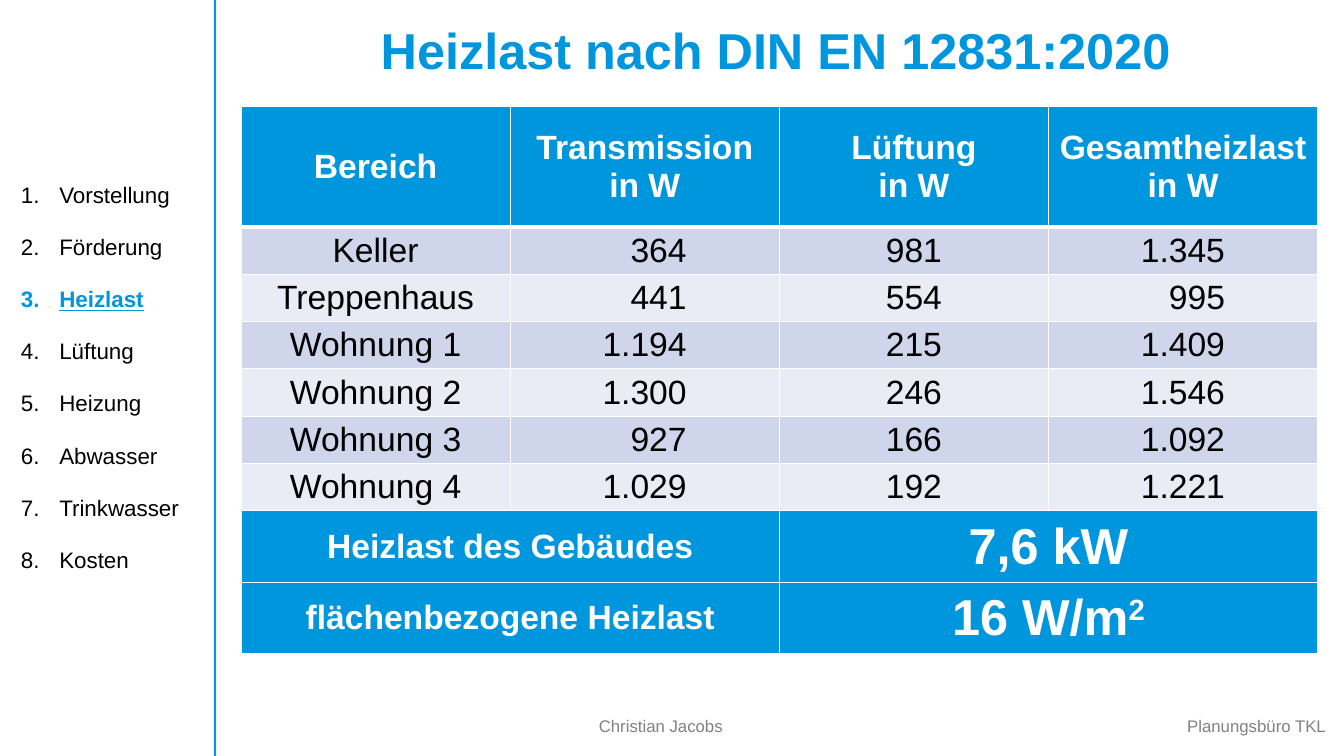
from dataclasses import dataclass

from lxml import etree
from pptx import Presentation
from pptx.dml.color import RGBColor
from pptx.enum.shapes import MSO_CONNECTOR
from pptx.enum.text import MSO_ANCHOR, PP_ALIGN
from pptx.oxml.ns import qn
from pptx.util import Inches, Pt

BLUE = RGBColor(0x00, 0x96, 0xDE)
WHITE = RGBColor(0xFF, 0xFF, 0xFF)
BLACK = RGBColor(0x00, 0x00, 0x00)
GRAY = RGBColor(0x81, 0x82, 0x86)
BAND_DARK = RGBColor(0xCF, 0xD5, 0xEA)
BAND_LIGHT = RGBColor(0xE9, 0xEB, 0xF5)
LEFT, CENTER, RIGHT = PP_ALIGN.LEFT, PP_ALIGN.CENTER, PP_ALIGN.RIGHT
TOP, MIDDLE = MSO_ANCHOR.TOP, MSO_ANCHOR.MIDDLE
STRAIGHT = MSO_CONNECTOR.STRAIGHT

CHAPTERS = ["Vorstellung", "Förderung", "Heizlast", "Lüftung",
            "Heizung", "Abwasser", "Trinkwasser", "Kosten"]
CURRENT_CHAPTER = "Heizlast"
HEADINGS = ["Bereich", "Transmission\nin W", "Lüftung\nin W", "Gesamtheizlast\nin W"]
AREAS = [
    ("Keller", "364", "981", "1.345"),
    ("Treppenhaus", "441", "554", "995"),
    ("Wohnung 1", "1.194", "215", "1.409"),
    ("Wohnung 2", "1.300", "246", "1.546"),
    ("Wohnung 3", "927", "166", "1.092"),
    ("Wohnung 4", "1.029", "192", "1.221"),
]
TOTALS = [("Heizlast des Gebäudes", "7,6 kW", ""),
          ("flächenbezogene Heizlast", "16 W/m", "2")]
ROW_HEIGHTS = [1.19] + [0.47] * len(AREAS) + [0.71] * len(TOTALS)
COLUMN_WIDTH = 2.67
COLUMN_ALIGNS = [CENTER, RIGHT, CENTER, RIGHT]
NUMBER_MARGIN = 0.92


@dataclass(frozen=True)
class Style:
    size: int
    color: RGBColor
    bold: bool = False
    underline: bool = False
    align: PP_ALIGN = LEFT


@dataclass(frozen=True)
class Area:
    left: float
    top: float
    width: float
    height: float


def style_para(para, style: Style) -> None:
    para.alignment = style.align
    para.font.name = "Arial"
    para.font.size = Pt(style.size)
    para.font.bold = style.bold
    para.font.underline = style.underline
    para.font.color.rgb = style.color


def add_text_frame(page, area: Area, anchor: MSO_ANCHOR):
    box = page.shapes.add_textbox(Inches(area.left), Inches(area.top),
                                  Inches(area.width), Inches(area.height))
    box.text_frame.word_wrap = True
    box.text_frame.vertical_anchor = anchor
    return box.text_frame


def add_label(page, area: Area, text: str, style: Style,
              anchor: MSO_ANCHOR = MIDDLE, line_spacing: float = 1.0) -> None:
    para = add_text_frame(page, area, anchor).paragraphs[0]
    para.text = text
    para.line_spacing = line_spacing
    style_para(para, style)


def add_chapters(page) -> None:
    frame = add_text_frame(page, Area(0.11, 1.75, 2.02, 4.54), TOP)
    for index, chapter in enumerate(CHAPTERS):
        para = frame.paragraphs[0] if index == 0 else frame.add_paragraph()
        current = chapter == CURRENT_CHAPTER
        para.text = chapter
        para.space_after = Pt(18)
        properties = para._p.get_or_add_pPr()
        properties.set("marL", str(Inches(0.38)))
        properties.set("indent", str(-Inches(0.38)))
        etree.SubElement(properties, qn("a:buFont"), typeface="Arial")
        etree.SubElement(properties, qn("a:buAutoNum"), type="arabicPeriod")
        style_para(para, Style(16, BLUE if current else BLACK, current, current))


def add_divider(page) -> None:
    line = page.shapes.add_connector(STRAIGHT, Inches(2.13), Inches(0),
                                     Inches(2.13), Inches(7.5))
    line.line.color.rgb = BLUE
    line.line.width = Pt(1.5)
    etree.SubElement(line._element.spPr, qn("a:effectLst"))


def style_cell(cell, fill: RGBColor, top: int = 1, bottom: int = 1) -> None:
    properties = cell._tc.get_or_add_tcPr()
    for side, width in (("L", 1), ("R", 1), ("T", top), ("B", bottom)):
        border = etree.SubElement(properties, qn(f"a:ln{side}"), w=str(Pt(width)))
        solid = etree.SubElement(border, qn("a:solidFill"))
        etree.SubElement(solid, qn("a:srgbClr"), val=str(WHITE))
    cell.fill.solid()
    cell.fill.fore_color.rgb = fill
    cell.vertical_anchor = MIDDLE
    cell.margin_left = cell.margin_right = Inches(0.05)
    cell.margin_top = cell.margin_bottom = Inches(0.03)


def write_cell(cell, text: str, style: Style) -> None:
    cell.text_frame.text = text
    for para in cell.text_frame.paragraphs:
        style_para(para, style)
    if style.align == RIGHT:
        cell.margin_right = Inches(NUMBER_MARGIN)


def add_heat_table(page) -> None:
    columns = len(HEADINGS)
    frame = page.shapes.add_table(len(ROW_HEIGHTS), columns, Inches(2.39), Inches(1.06),
                                  Inches(COLUMN_WIDTH * columns), Inches(sum(ROW_HEIGHTS)))
    table = frame.table
    table.first_row = table.horz_banding = False
    for column in table.columns:
        column.width = Inches(COLUMN_WIDTH)
    for row, height in zip(table.rows, ROW_HEIGHTS):
        row.height = Inches(height)

    for column, heading in enumerate(HEADINGS):
        cell = table.cell(0, column)
        style_cell(cell, BLUE, bottom=3)
        write_cell(cell, heading, Style(24, WHITE, bold=True, align=CENTER))

    for row, values in enumerate(AREAS, start=1):
        for column, (value, align) in enumerate(zip(values, COLUMN_ALIGNS)):
            cell = table.cell(row, column)
            style_cell(cell, BAND_DARK if row % 2 else BAND_LIGHT, top=3 if row == 1 else 1)
            write_cell(cell, value, Style(24, BLACK, align=align))

    for row, (label, value, exponent) in enumerate(TOTALS, start=len(AREAS) + 1):
        for column in range(columns):
            style_cell(table.cell(row, column), BLUE)
        for column, text, size in ((0, label, 24), (2, value, 36)):
            cell = table.cell(row, column)
            cell.merge(table.cell(row, column + 1))
            write_cell(cell, text, Style(size, WHITE, bold=True, align=CENTER))
        if exponent:
            span = table.cell(row, 2).text_frame.paragraphs[0].add_run()
            span.text = exponent
            span._r.get_or_add_rPr().set("baseline", "30000")


def main() -> None:
    deck = Presentation()
    deck.slide_width, deck.slide_height = Inches(13.33), Inches(7.5)
    page = deck.slides.add_slide(deck.slide_layouts[6])
    add_label(page, Area(5.84, 7.05, 1.65, 0.3), "Christian Jacobs", Style(12, GRAY), TOP)
    add_divider(page)
    add_chapters(page)
    add_label(page, Area(2.78, 0, 9.83, 1.06), "Heizlast nach DIN EN 12831:2020",
              Style(36, BLUE, bold=True, align=CENTER), line_spacing=0.9)
    add_heat_table(page)
    add_label(page, Area(11.6, 7.05, 1.65, 0.3), "Planungsbüro TKL",
              Style(12, GRAY, align=RIGHT))
    deck.save("out.pptx")


if __name__ == "__main__":
    main()
